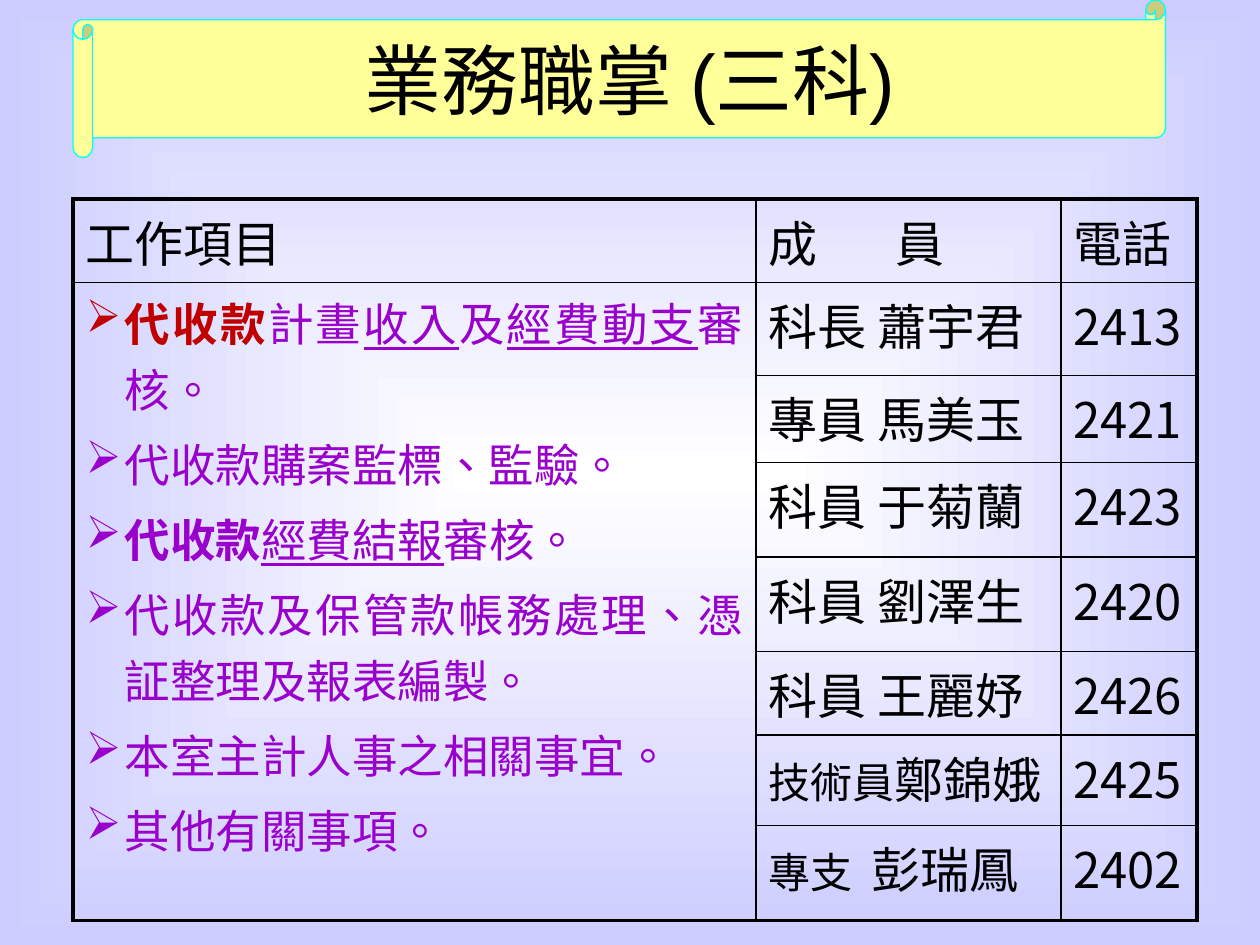
from pptx import Presentation
from pptx.dml.color import RGBColor
from pptx.enum.shapes import MSO_SHAPE
from pptx.enum.text import MSO_ANCHOR, PP_ALIGN
from pptx.oxml import parse_xml
from pptx.oxml.ns import nsdecls, qn
from pptx.oxml.xmlchemy import OxmlElement
from pptx.util import Inches, Pt

SCROLL = MSO_SHAPE.HORIZONTAL_SCROLL
MIDDLE = MSO_ANCHOR.MIDDLE
CENTER, LEFT, JUSTIFY = PP_ALIGN.CENTER, PP_ALIGN.LEFT, PP_ALIGN.JUSTIFY
TITLE_ONLY = 5

THEME = {
    "black": "000000", "purple": "9900CC", "red": "C00000",
    "scroll": "FFFF99", "scroll line": "00FFFF",
    "center": "FFFFFF", "edge": "CCCCFF",
    "title font": "Arial", "table font": "Noto Sans CJK SC",
    "duty font": "Times New Roman", "east asian font": "Noto Sans CJK SC",
    "title size": 44, "table size": 28, "small size": 24, "duty size": 26,
    "outer line": 2.25, "inner line": 1,
}

TITLE = "業務職掌 (三科)"
HEADERS = ["工作項目", "成\t員", "電話"]
# Each duty is a list of (text, marks): b bold, u underlined, r red
DUTIES = [
    [("代收款", "br"), ("計畫", ""), ("收入", "u"), ("及", ""),
     ("經費動支", "u"), ("審核。", "")],
    [("代收款購案監標、監驗。", "")],
    [("代收款", "b"), ("經費結報", "u"), ("審核。", "")],
    [("代收款及保管款帳務處理、憑証整理及報表編製。", "")],
    [("本室主計人事之相關事宜。", "")],
    [("其他有關事項。", "")],
]
# Job title set small, the rest of the name, phone
MEMBERS = [
    ("", "科長 蕭宇君", "2413"),
    ("", "專員 馬美玉", "2421"),
    ("", "科員 于菊蘭", "2423"),
    ("", "科員 劉澤生", "2420"),
    ("", "科員 王麗妤", "2426"),
    ("技術員", "鄭錦娥", "2425"),
    ("專支\t", "彭瑞鳳", "2402"),
]
TAB_STOPS = {"成\t員": 1.01, "專支\t": 0.82}
COLUMN_WIDTHS = [5.42, 2.42, 1.08]
ROW_HEIGHTS = [0.55, 0.74, 0.69, 0.75, 0.75, 0.64, 0.72, 0.75]


def color(name):
    return RGBColor.from_string(THEME[name])


def add_run(paragraph, text, font, size, color_name="black", marks=""):
    run = paragraph.add_run()
    run.text = text
    run.font.size = Pt(THEME[size])
    run.font.bold = "b" in marks
    run.font.underline = "u" in marks
    run.font.color.rgb = color(color_name)
    run.font.name = THEME[font]
    properties = run.font._element
    properties.set("lang", "zh-TW")
    east_asian = OxmlElement("a:ea")
    east_asian.set("typeface", THEME["east asian font"])
    properties.append(east_asian)


def add_tab_stop(paragraph, inches):
    properties = paragraph._p.get_or_add_pPr()
    properties.append(parse_xml(
        f'<a:tabLst {nsdecls("a")}><a:tab pos="{Inches(inches)}" algn="l"/></a:tabLst>'))


def add_bullet(paragraph):
    properties = paragraph._p.get_or_add_pPr()
    properties.set("marL", str(Inches(0.31)))
    properties.set("indent", str(-Inches(0.31)))
    bullet = OxmlElement("a:buChar")
    bullet.set("char", "➢")
    properties.append(bullet)


def fill_background(slide):
    """Radial gradient, light in the middle of the slide."""
    fill = slide.background.fill
    fill.gradient()
    for stop, name, position in zip(fill.gradient_stops, ("center", "edge"), (0, 1)):
        stop.color.rgb = color(name)
        stop.position = position
    linear = next(slide.element.iter(qn("a:lin")))
    linear.getparent().replace(linear, parse_xml(
        f'<a:path {nsdecls("a")} path="shape">'
        '<a:fillToRect l="50000" t="50000" r="50000" b="50000"/></a:path>'))


def set_borders(cell, outer_sides):
    properties = cell._tc.get_or_add_tcPr()
    for index, side in enumerate("LRTB"):
        width = THEME["outer line" if side in outer_sides else "inner line"]
        properties.insert(index, parse_xml(
            f'<a:ln{side} {nsdecls("a")} w="{Pt(width)}"><a:solidFill>'
            f'<a:srgbClr val="{THEME["black"]}"/></a:solidFill></a:ln{side}>'))


def add_title(slide):
    title = slide.shapes.title
    title.left, title.top, title.width, title.height = map(Inches, (0.75, 0, 8.5, 1.25))
    title.text_frame.vertical_anchor = MIDDLE
    paragraph = title.text_frame.paragraphs[0]
    paragraph.alignment = CENTER
    add_run(paragraph, TITLE, "title font", "title size")

    scroll = slide.shapes.add_shape(SCROLL, *map(Inches, (0.58, 0, 8.67, 1.25)))
    scroll.shadow.inherit = False
    scroll.fill.solid()
    scroll.fill.fore_color.rgb = color("scroll")
    scroll.line.color.rgb = color("scroll line")
    scroll.line.width = Pt(0.75)
    title.element.addprevious(scroll.element)


def write_cell(cell, *parts):
    """Write (text, size) parts on one line."""
    paragraph = cell.text_frame.paragraphs[0]
    paragraph.alignment = LEFT
    for text, size in parts:
        if text in TAB_STOPS:
            add_tab_stop(paragraph, TAB_STOPS[text])
        if text:
            add_run(paragraph, text, "table font", size)


def write_duties(cell):
    frame = cell.text_frame
    for index, duty in enumerate(DUTIES):
        paragraph = frame.add_paragraph() if index else frame.paragraphs[0]
        add_bullet(paragraph)
        paragraph.alignment = JUSTIFY
        if index:
            paragraph.space_before = Pt(0.2 * THEME["duty size"])
        for text, marks in duty:
            add_run(paragraph, text, "duty font", "duty size",
                    "red" if "r" in marks else "purple", marks)


def add_duty_table(slide):
    last_row, last_column = len(ROW_HEIGHTS) - 1, len(COLUMN_WIDTHS) - 1
    table = slide.shapes.add_table(
        last_row + 1, last_column + 1, Inches(0.58), Inches(1.58),
        Inches(sum(COLUMN_WIDTHS)), Inches(sum(ROW_HEIGHTS))).table
    table.first_row = table.horz_banding = False
    for column, width in zip(table.columns, COLUMN_WIDTHS):
        column.width = Inches(width)
    for row, height in zip(table.rows, ROW_HEIGHTS):
        row.height = Inches(height)

    duties_cell = table.cell(1, 0)
    duties_cell.merge(table.cell(last_row, 0))
    for r in range(last_row + 1):
        for c in range(last_column + 1):
            cell = table.cell(r, c)
            bottom = r == last_row or cell.is_merge_origin
            edges = {"L": c == 0, "R": c == last_column, "T": r == 0, "B": bottom}
            set_borders(cell, [side for side, outer in edges.items() if outer])
            cell.fill.background()

    for c, header in enumerate(HEADERS):
        write_cell(table.cell(0, c), (header, "table size"))
    write_duties(duties_cell)
    for r, (job, name, phone) in enumerate(MEMBERS, start=1):
        write_cell(table.cell(r, 1), (job, "small size"), (name, "table size"))
        write_cell(table.cell(r, 2), (phone, "table size"))


def main():
    presentation = Presentation()
    presentation.slide_width, presentation.slide_height = Inches(10), Inches(7.5)
    slide = presentation.slides.add_slide(presentation.slide_layouts[TITLE_ONLY])
    fill_background(slide)
    add_title(slide)
    add_duty_table(slide)
    presentation.save("out.pptx")


if __name__ == "__main__":
    main()
